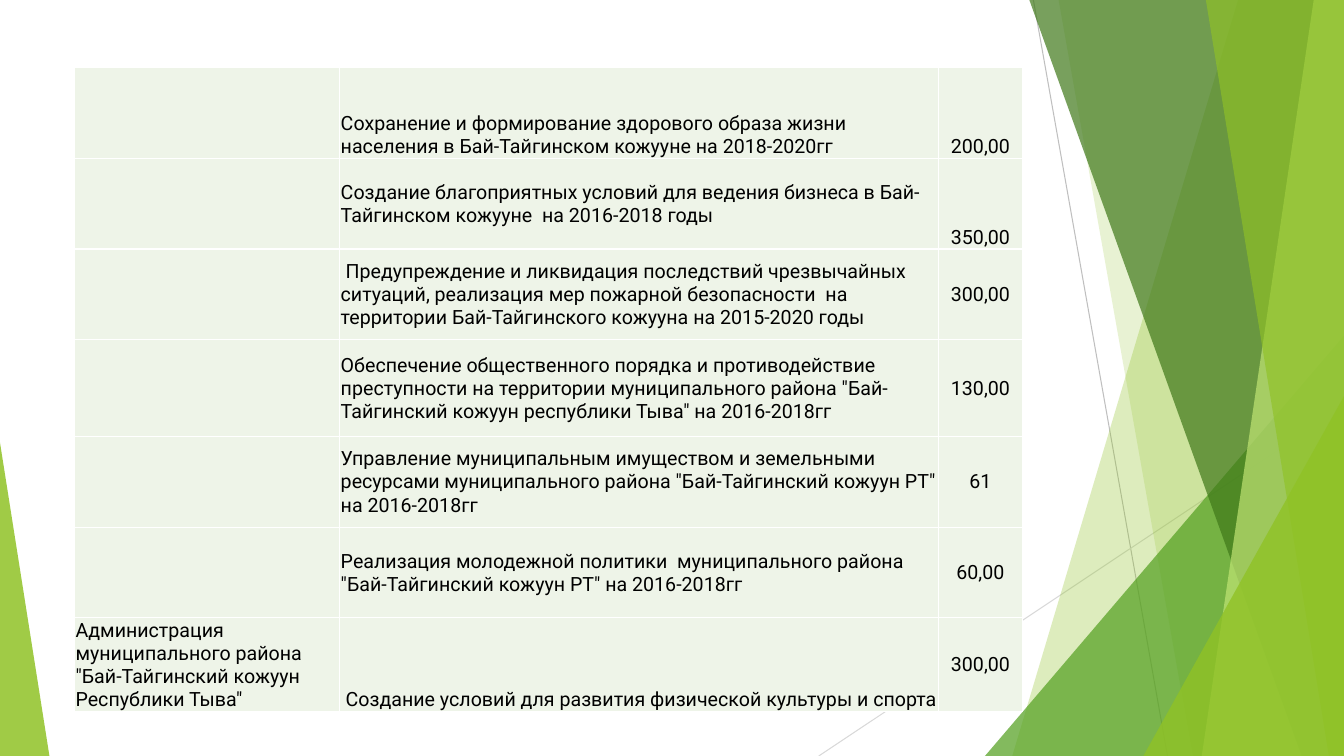
from dataclasses import dataclass

from lxml.etree import SubElement
from pptx import Presentation
from pptx.dml.color import RGBColor
from pptx.enum.shapes import MSO_CONNECTOR, MSO_SHAPE
from pptx.enum.text import MSO_ANCHOR as Anchor, PP_ALIGN as Align
from pptx.oxml.ns import qn
from pptx.util import Inches, Pt

WIDTH, HEIGHT = Inches(13.33), Inches(7.5)


@dataclass(frozen=True)
class Theme:
    font: str = "Roboto"
    size: float = 14
    text: str = "000000"
    cell: str = "EEF4E8"
    border: str = "FFFFFF"
    lime: str = "90C226"
    green: str = "54A021"
    dark: str = "3F7819"
    pale: str = "C0E474"
    grey: str = "BFBFBF"
    light_grey: str = "D9D9D9"


THEME = Theme()

# Table grid, in percent of the slide's width and height
COLUMNS = [19.73, 44.56, 6.23]
ROW, TALL_ROW = 12, 12.8

# Owner, programme, amount, then anchors of programme and amount
PROGRAMMES = [
    ("", "Сохранение и формирование здорового образа жизни населения "
     "в Бай-Тайгинском кожууне на 2018-2020гг", "200,00", Anchor.BOTTOM, Anchor.BOTTOM),
    ("", "Создание благоприятных условий для ведения бизнеса в "
     "Бай-Тайгинском кожууне  на 2016-2018 годы", "350,00", Anchor.MIDDLE, Anchor.BOTTOM),
    ("", " Предупреждение и ликвидация последствий чрезвычайных ситуаций, "
     "реализация мер пожарной безопасности  на территории "
     "Бай-Тайгинского кожууна на 2015-2020 годы", "300,00", Anchor.MIDDLE, Anchor.MIDDLE),
    ("", "Обеспечение общественного порядка и противодействие преступности "
     "на территории муниципального района \"Бай-Тайгинский кожуун "
     "республики Тыва\" на 2016-2018гг", "130,00", Anchor.MIDDLE, Anchor.MIDDLE),
    ("", "Управление муниципальным имуществом и земельными ресурсами "
     "муниципального района \"Бай-Тайгинский кожуун РТ\" на 2016-2018гг",
     "61", Anchor.MIDDLE, Anchor.MIDDLE),
    ("", "Реализация молодежной политики  муниципального района "
     "\"Бай-Тайгинский кожуун РТ\" на 2016-2018гг", "60,00", Anchor.MIDDLE, Anchor.MIDDLE),
    ("Администрация муниципального района \"Бай-Тайгинский кожуун "
     "Республики Тыва\"", " Создание условий для развития физической культуры и спорта",
     "300,00", Anchor.BOTTOM, Anchor.MIDDLE),
]


def across(percent):
    return int(WIDTH * percent / 100)


def down(percent):
    return int(HEIGHT * percent / 100)


def paint(s, color, opacity):
    s.shadow.inherit = False
    s.line.fill.background()
    s.fill.solid()
    s.fill.fore_color.rgb = RGBColor.from_string(color)
    clr = s.fill._xPr.find(qn("a:solidFill"))[0]
    SubElement(clr, qn("a:alpha"), val=str(opacity * 1000))


def add_thin_line(slide, x1, y1, x2, y2, color):
    s = slide.shapes.add_connector(
        MSO_CONNECTOR.STRAIGHT, across(x1), down(y1), across(x2), down(y2))
    s.line.color.rgb = RGBColor.from_string(color)
    s.line.width = Pt(0.75)
    SubElement(s._element.spPr, qn("a:effectLst"))


def add_band(slide, top_x, bottom_x, color, opacity):
    """Full-height band from a slanted left side to the slide's right edge."""
    builder = slide.shapes.build_freeform(across(top_x), 0)
    builder.add_line_segments(
        [(WIDTH, 0), (WIDTH, HEIGHT), (across(bottom_x), HEIGHT)], close=True)
    paint(builder.convert_to_shape(), color, opacity)


def add_corner(slide, left, right, top, apex, color, opacity):
    """Right-angled triangle standing on the slide's bottom edge."""
    s = slide.shapes.add_shape(
        MSO_SHAPE.ISOSCELES_TRIANGLE, across(left), down(top),
        across(right - left), HEIGHT - down(top))
    s.adjustments[0] = apex
    paint(s, color, opacity)


def add_borders(cell):
    tc_pr = cell._tc.get_or_add_tcPr()
    for position, side in enumerate(("a:lnL", "a:lnR", "a:lnT", "a:lnB")):
        ln = SubElement(tc_pr, qn(side), w=str(Pt(1)))
        fill = SubElement(ln, qn("a:solidFill"))
        SubElement(fill, qn("a:srgbClr"), val=THEME.border)
        tc_pr.insert(position, ln)


def fill_cell(cell, text, anchor, align):
    cell.fill.solid()
    cell.fill.fore_color.rgb = RGBColor.from_string(THEME.cell)
    add_borders(cell)
    cell.margin_left = cell.margin_right = cell.margin_top = Inches(0.01)
    cell.margin_bottom = 0
    cell.vertical_anchor = anchor
    if not text:
        return
    p = cell.text_frame.paragraphs[0]
    p.alignment = align
    r = p.add_run()
    r.text = text
    r.font.name = THEME.font
    r.font.size = Pt(THEME.size)
    r.font.color.rgb = RGBColor.from_string(THEME.text)


def add_programme_table(slide):
    heights = [ROW] * len(PROGRAMMES)
    heights[3] = TALL_ROW
    table = slide.shapes.add_table(
        len(heights), len(COLUMNS), across(5.55), down(8.93),
        across(sum(COLUMNS)), down(sum(heights))).table
    table.first_row = table.horz_banding = False
    for column, width in zip(table.columns, COLUMNS):
        column.width = across(width)
    for row, height, programme in zip(table.rows, heights, PROGRAMMES):
        row.height = down(height)
        owner, name, amount, name_anchor, amount_anchor = programme
        fill_cell(row.cells[0], owner, Anchor.MIDDLE, Align.LEFT)
        fill_cell(row.cells[1], name, name_anchor, Align.LEFT)
        fill_cell(row.cells[2], amount, amount_anchor, Align.CENTER)


def add_backdrop(slide):
    add_thin_line(slide, 76.89, 0, 86.87, 100, THEME.grey)
    add_thin_line(slide, 100, 53.73, 60.92, 100, THEME.light_grey)
    # Overlapping translucent facets, back to front
    add_band(slide, 92.12, 75.32, THEME.lime, 30)
    add_band(slide, 78.77, 88.75, THEME.lime, 20)
    add_corner(slide, 73.29, 100, 44.4, 1, THEME.green, 72)
    add_band(slide, 76.59, 96.85, THEME.dark, 70)
    add_band(slide, 97.75, 89.42, THEME.pale, 70)
    add_band(slide, 89.72, 98.87, THEME.lime, 65)
    add_corner(slide, 85.07, 100, 52.4, 1, THEME.lime, 80)
    add_corner(slide, 0, 3.68, 58.53, 0, THEME.lime, 85)


def main():
    prs = Presentation()
    prs.slide_width, prs.slide_height = WIDTH, HEIGHT
    slide = prs.slides.add_slide(prs.slide_layouts[6])
    add_backdrop(slide)
    add_programme_table(slide)
    prs.save("out.pptx")


if __name__ == "__main__":
    main()
